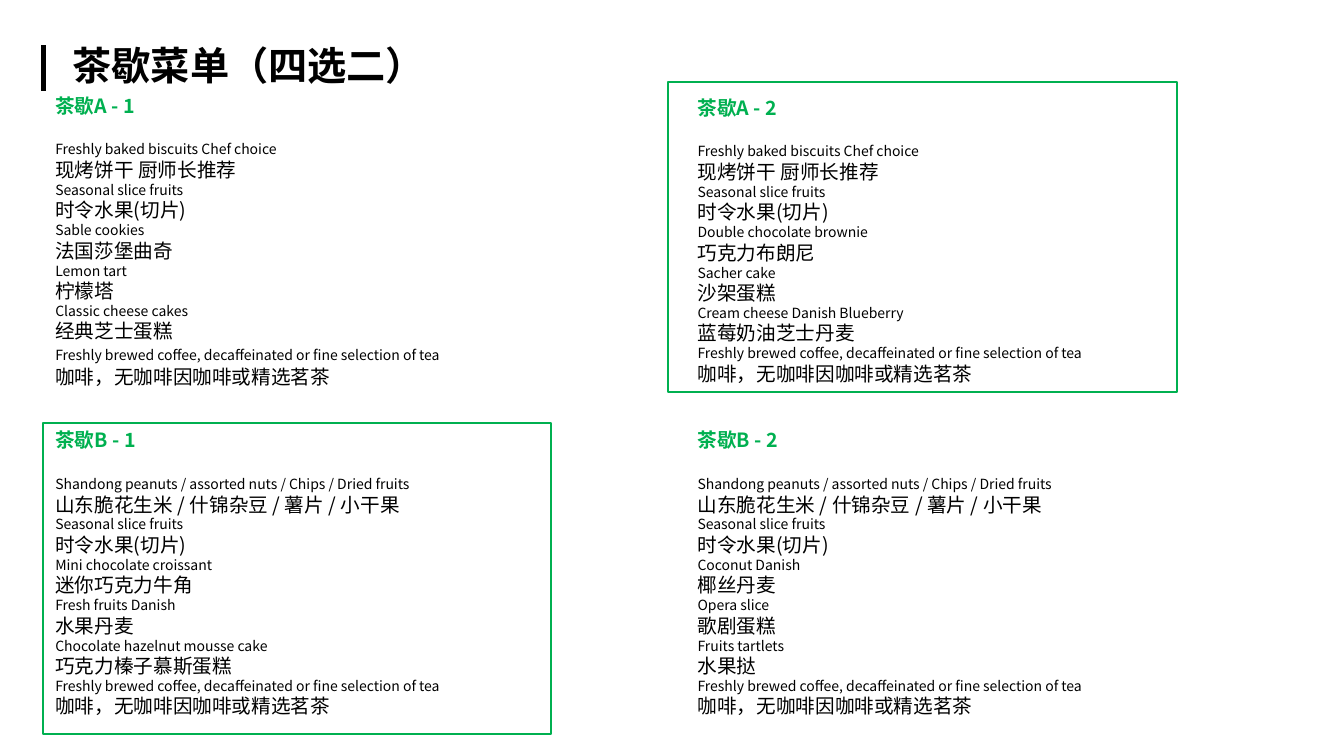
from lxml.etree import SubElement
from pptx import Presentation
from pptx.dml.color import RGBColor
from pptx.enum.shapes import MSO_CONNECTOR, MSO_SHAPE
from pptx.enum.text import MSO_AUTO_SIZE
from pptx.oxml.ns import qn
from pptx.util import Inches, Pt

GREEN, BLACK = "00B050", "000000"
BODY_FONT = "Noto Sans CJK SC"

# Dishes shared by the menus
BISCUITS = ("Freshly baked biscuits Chef choice", "现烤饼干 厨师长推荐")
NUTS = ("Shandong peanuts / assorted nuts / Chips / Dried fruits",
        "山东脆花生米 / 什锦杂豆 / 薯片 / 小干果")
FRUITS = ("Seasonal slice fruits", "时令水果(切片)")
DRINKS = ("Freshly brewed coffee, decaffeinated or fine selection of tea",
          "咖啡，无咖啡因咖啡或精选茗茶")

# Heading, box (left, top, width, height), dishes
MENUS = [
    ("茶歇A - 1", (0.45, 0.88, 6.37, 3.13), [
        BISCUITS, FRUITS, ("Sable cookies", "法国莎堡曲奇"),
        ("Lemon tart", "柠檬塔"), ("Classic cheese cakes", "经典芝士蛋糕"), DRINKS]),
    ("茶歇B - 1", (0.45, 4.2, 6.67, 3), [
        NUTS, FRUITS, ("Mini chocolate croissant", "迷你巧克力牛角"),
        ("Fresh fruits Danish", "水果丹麦"),
        ("Chocolate hazelnut mousse cake", "巧克力榛子慕斯蛋糕"), DRINKS]),
    ("茶歇A - 2", (6.82, 0.9, 6.67, 3), [
        BISCUITS, FRUITS, ("Double chocolate brownie", "巧克力布朗尼"),
        ("Sacher cake", "沙架蛋糕"),
        ("Cream cheese Danish Blueberry", "蓝莓奶油芝士丹麦"), DRINKS]),
    ("茶歇B - 2", (6.82, 4.2, 6.67, 3), [
        NUTS, FRUITS, ("Coconut Danish", "椰丝丹麦"), ("Opera slice", "歌剧蛋糕"),
        ("Fruits tartlets", "水果挞"), DRINKS]),
]
CHOSEN_FRAMES = [(6.63, 0.81, 5.04, 3.08), (0.43, 4.2, 5.04, 3.08)]


def color(hex_value):
    return RGBColor.from_string(hex_value)


def style_text(paragraph, size, hex_value, bold=False, font_name=BODY_FONT):
    for run in paragraph.runs:
        run.font.size = Pt(size)
        run.font.bold = bold
        run.font.color.rgb = color(hex_value)
        run.font.name = font_name
        east_asian = SubElement(run.font._element, qn("a:ea"))
        east_asian.set("typeface", BODY_FONT)


def add_text_frame(slide, box):
    frame = slide.shapes.add_textbox(*map(Inches, box)).text_frame
    frame.word_wrap = True
    frame.auto_size = MSO_AUTO_SIZE.SHAPE_TO_FIT_TEXT
    return frame


def add_title(slide, box):
    left, top, _, height = box
    # Upright bar beside the title
    bar_x = Inches(left - 0.26)
    bar = slide.shapes.add_connector(
        MSO_CONNECTOR.STRAIGHT, bar_x, Inches(top + height), bar_x, Inches(top - 0.06))
    bar.line.color.rgb = color(BLACK)
    bar.line.width = Pt(4)
    SubElement(bar._element.spPr, qn("a:effectLst"))
    # Title text
    frame = add_text_frame(slide, box)
    frame.margin_left = frame.margin_right = Inches(0.03)
    frame.margin_top = frame.margin_bottom = Inches(0.03)
    title = frame.paragraphs[0]
    title.text = "茶歇菜单（四选二）"
    title.line_spacing = 0.7
    style_text(title, 28, BLACK, True, "Arial")


def add_menu(slide, box, heading, dishes):
    frame = add_text_frame(slide, box)
    frame.text = "\n".join([heading] + [name for dish in dishes for name in dish])
    heading_line, *dish_lines = frame.paragraphs
    style_text(heading_line, 14, GREEN, True)
    for index, dish_line in enumerate(dish_lines):
        style_text(dish_line, 14 if index % 2 else 10, BLACK)
    dish_lines[0].space_before = Pt(17)
    return dish_lines


def add_chosen_frame(slide, box):
    frame = slide.shapes.add_shape(MSO_SHAPE.RECTANGLE, *map(Inches, box))
    frame.shadow.inherit = False
    frame.fill.background()
    frame.line.color.rgb = color(GREEN)
    frame.line.width = Pt(1.5)


def main():
    deck = Presentation()
    deck.slide_width, deck.slide_height = Inches(13.33), Inches(7.5)
    slide = deck.slides.add_slide(deck.slide_layouts[6])

    add_title(slide, (0.69, 0.51, 4.01, 0.39))
    menu_lines = [add_menu(slide, box, heading, dishes)
                  for heading, box, dishes in MENUS]
    # The drinks of the first menu stand slightly apart
    drinks_line = menu_lines[0][-2]
    drinks_line.space_before, drinks_line.space_after = Pt(3), Pt(1)
    for box in CHOSEN_FRAMES:
        add_chosen_frame(slide, box)

    deck.save("out.pptx")


if __name__ == "__main__":
    main()
